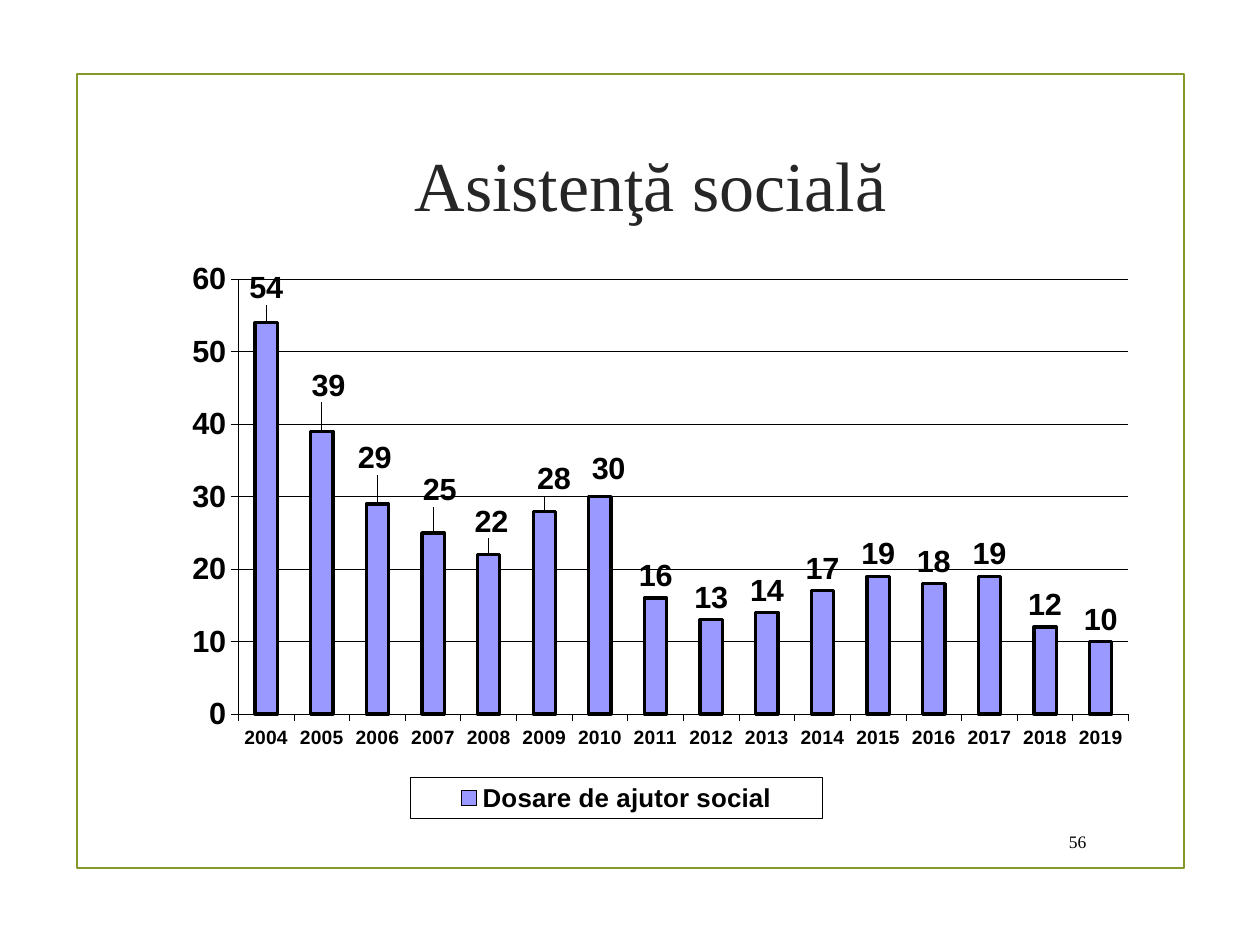
"""Build the social assistance slide: a framed title, a column chart and a page number."""
from dataclasses import dataclass

from lxml.etree import SubElement
from pptx import Presentation
from pptx.chart.data import CategoryChartData
from pptx.dml.color import RGBColor
from pptx.enum.chart import XL_CHART_TYPE as Chart, XL_LABEL_POSITION as LabelPos
from pptx.enum.chart import XL_LEGEND_POSITION as LegendPos, XL_TICK_LABEL_POSITION as TickPos
from pptx.enum.chart import XL_TICK_MARK as Tick
from pptx.enum.shapes import MSO_SHAPE as Shape
from pptx.enum.text import MSO_ANCHOR as Anchor, PP_ALIGN as Align
from pptx.oxml.ns import qn
from pptx.util import Inches, Pt

TITLE = "Asistenţă socială"
PAGE = "56"
SERIES = "Dosare de ajutor social"
FIRST_YEAR = 2004
VALUES = [54, 39, 29, 25, 22, 28, 30, 16, 13, 14, 17, 19, 18, 19, 12, 10]
LABEL_SHIFTS = [(0, -2.2), (0.7, -4.1), (-0.3, -4.1), (0.7, -3.6), (0.3, -1.9), (1, -1.7), (0.9, -1)]

FRAME_BOX = (0.61, 0.59, 8.79, 6.3)
TITLE_BOX = (0.83, 0.83, 8.67, 1.25)
CHART_BOX = (1.36, 2.08, 7.6, 4.6)
PAGE_BOX = (8.29, 6.52, 0.43, 0.31)
PLOT_SHARE = (0.07, 0.03, 0.93, 0.75)
LEGEND_SHARE = (0.25, 0.89, 0.43, 0.07)


@dataclass(frozen=True)
class Theme:
    serif: str = "Times New Roman"
    sans: str = "Arial"
    frame: str = "83992A"
    title: str = "262626"
    ink: str = "000000"
    bar: str = "9999FF"
    title_pt: float = 40
    page_pt: float = 10
    year_pt: float = 11
    value_pt: float = 17.5
    legend_pt: float = 14.8
    hair_pt: float = 0.46
    bar_line_pt: float = 1.84
    frame_pt: float = 1.25


T = Theme()


def inches(box):
    return [Inches(v) for v in box]


def style_font(font, name, size, color, bold=False):
    font.name, font.size, font.bold = name, Pt(size), bold
    font.color.rgb = RGBColor.from_string(color)


def style_line(line, color, width):
    line.color.rgb = RGBColor.from_string(color)
    line.width = Pt(width)


def write(sp, text, align, size, color):
    tf = sp.text_frame
    tf.word_wrap, tf.vertical_anchor = True, Anchor.MIDDLE
    p = tf.paragraphs[0]
    p.alignment = align
    r = p.add_run()
    r.text = text
    style_font(r.font, T.serif, size, color)


def set_layout(layout, values, modes=()):
    manual = SubElement(layout, qn("c:manualLayout"))
    for tag, val in [*modes, *zip("xywh", values)]:
        SubElement(manual, qn(f"c:{tag}")).set("val", str(val))


def new_layout(anchor):
    layout = SubElement(anchor.getparent(), qn("c:layout"))
    anchor.addnext(layout)
    return layout


def style_axis(axis, size):
    axis.major_tick_mark, axis.minor_tick_mark = Tick.OUTSIDE, Tick.NONE
    style_font(axis.tick_labels.font, T.sans, size, T.ink, True)
    style_line(axis.format.line, T.ink, T.hair_pt)


def style_labels(series):
    labels = series.data_labels
    labels.show_value, labels.position = True, LabelPos.OUTSIDE_END
    style_font(labels.font, T.sans, T.value_pt, T.ink, True)
    for i, shift in enumerate(LABEL_SHIFTS):
        label = series.points[i].data_label
        label.position = LabelPos.OUTSIDE_END
        style_font(label.font, T.sans, T.value_pt, T.ink, True)
    for idx, shift in zip(labels._element.findall(f"{qn('c:dLbl')}/{qn('c:idx')}"), LABEL_SHIFTS):
        set_layout(new_layout(idx), [round(v / 100, 3) for v in shift])


def add_legend(chart):
    chart.has_legend = True
    legend = chart.legend
    legend.position, legend.include_in_layout = LegendPos.BOTTOM, False
    style_font(legend.font, T.sans, T.legend_pt, T.ink, True)
    el = legend._element
    old = el.find(qn("c:layout"))
    if old is not None:
        el.remove(old)
    edge = [("xMode", "edge"), ("yMode", "edge")]
    set_layout(new_layout(el.find(qn("c:legendPos"))), LEGEND_SHARE, edge)
    sp_pr = SubElement(el, qn("c:spPr"))
    el.find(qn("c:overlay")).addnext(sp_pr)
    ln = SubElement(sp_pr, qn("a:ln"), w=str(Pt(T.hair_pt)))
    SubElement(SubElement(ln, qn("a:solidFill")), qn("a:srgbClr"), val=T.ink)


def add_chart(slide):
    data = CategoryChartData()
    data.categories = [str(FIRST_YEAR + i) for i in range(len(VALUES))]
    data.add_series(SERIES, VALUES)
    chart = slide.shapes.add_chart(Chart.COLUMN_CLUSTERED, *inches(CHART_BOX), data).chart
    chart.has_title = False
    style_font(chart.font, T.sans, T.value_pt, T.ink, True)

    years, scale = chart.category_axis, chart.value_axis
    style_axis(years, T.year_pt)
    style_axis(scale, T.value_pt)
    years.tick_label_position = TickPos.LOW
    scale.minimum_scale, scale.maximum_scale, scale.major_unit = 0, 60, 10
    style_line(scale.major_gridlines.format.line, T.ink, T.hair_pt)

    plot = chart.plots[0]
    plot.gap_width, plot.vary_by_categories = 150, False
    series = plot.series[0]
    series.format.fill.solid()
    series.format.fill.fore_color.rgb = RGBColor.from_string(T.bar)
    style_line(series.format.line, T.ink, T.bar_line_pt)
    style_labels(series)
    add_legend(chart)

    area = chart._chartSpace.find(f".//{qn('c:plotArea')}")
    for old in area.findall(qn("c:layout")):
        area.remove(old)
    layout = SubElement(area, qn("c:layout"))
    area.insert(0, layout)
    inner = [("layoutTarget", "inner"), ("xMode", "edge"), ("yMode", "edge")]
    set_layout(layout, PLOT_SHARE, inner)


def main():
    prs = Presentation()
    prs.slide_width, prs.slide_height = Inches(10), Inches(7.5)
    slide = prs.slides.add_slide(prs.slide_layouts[5])

    frame = slide.shapes.add_shape(Shape.RECTANGLE, *inches(FRAME_BOX))
    frame.shadow.inherit = False
    frame.fill.background()
    style_line(frame.line, T.frame, T.frame_pt)

    title = slide.shapes.title
    title.left, title.top, title.width, title.height = inches(TITLE_BOX)
    write(title, TITLE, Align.CENTER, T.title_pt, T.title)

    add_chart(slide)
    write(slide.shapes.add_textbox(*inches(PAGE_BOX)), PAGE, Align.RIGHT, T.page_pt, T.ink)
    prs.save("out.pptx")


if __name__ == "__main__":
    main()
